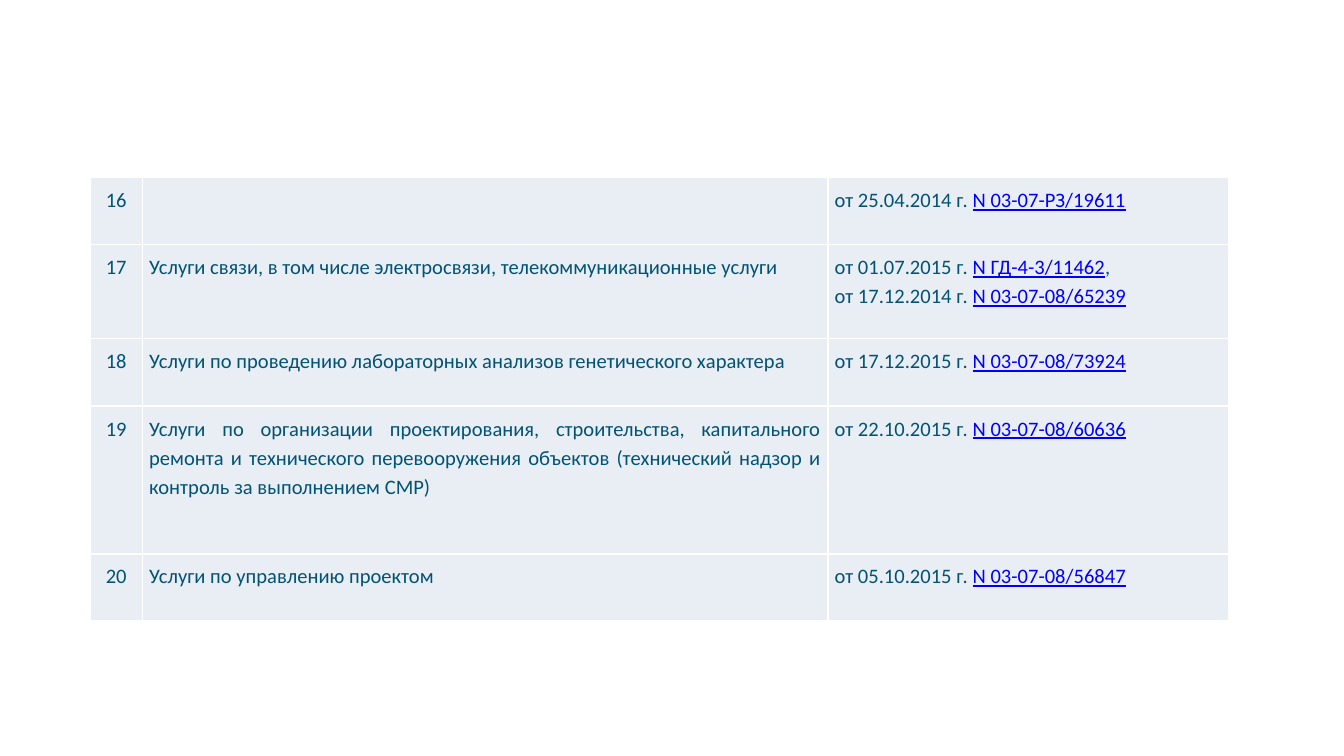
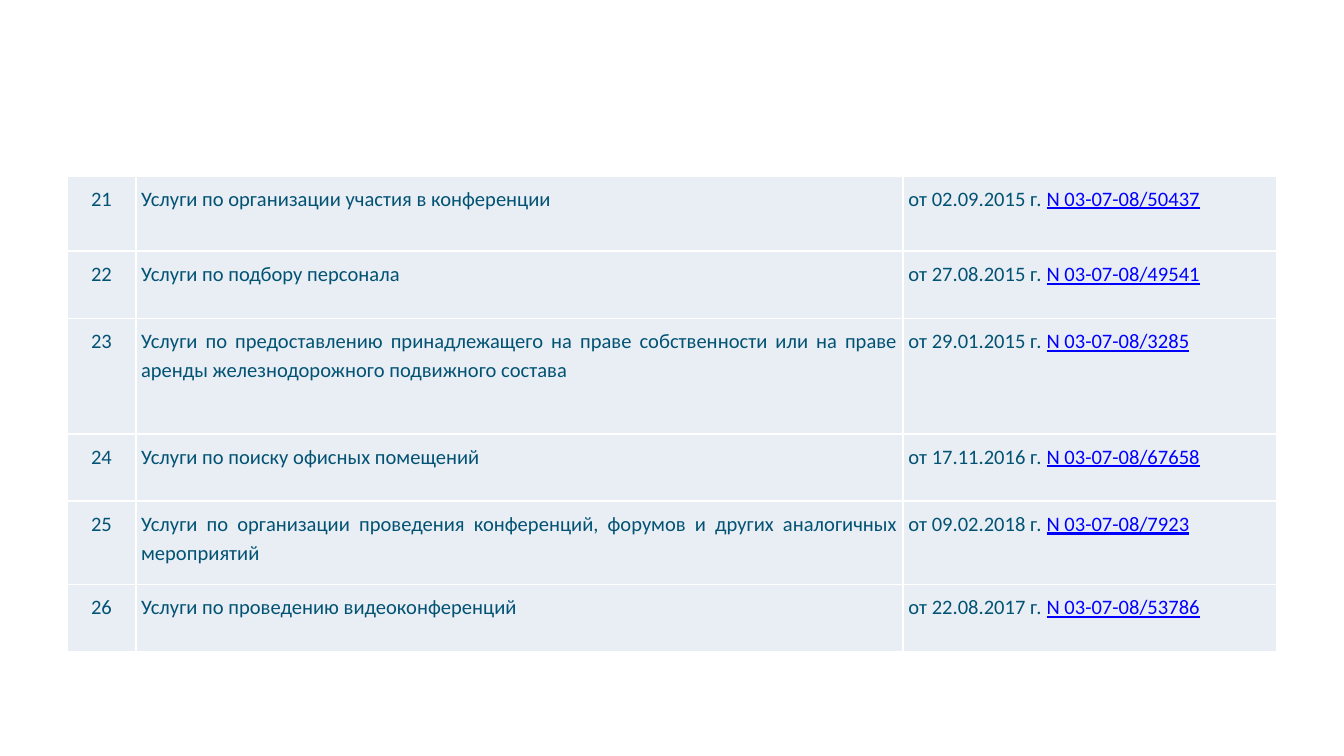
from lxml import etree
from pptx import Presentation
from pptx.dml.color import RGBColor
from pptx.enum.text import PP_ALIGN
from pptx.oxml.ns import qn
from pptx.util import Inches, Pt

CENTER = PP_ALIGN.CENTER
JUSTIFY = PP_ALIGN.JUSTIFY
LEFT = PP_ALIGN.LEFT

FONT = "Calibri"
TEXT = "025373"
LINK = "0000FF"
CELL = "E9EDF4"
BORDER = "FFFFFF"


def color(value):
    return RGBColor.from_string(value)


def add_borders(cell):
    properties = cell._tc.get_or_add_tcPr()
    for side in ("a:lnL", "a:lnR", "a:lnT", "a:lnB"):
        line = etree.SubElement(properties, qn(side), w=str(Pt(1)))
        fill = etree.SubElement(line, qn("a:solidFill"))
        etree.SubElement(fill, qn("a:srgbClr"), val=BORDER)


tables = [
    {
        "left": 0.67, "top": 1.32, "first_number": 16,
        "side_margin": 0.05, "letter_alignment": JUSTIFY,
        "widths": [0.39, 5.1, 2.98],
        "rows": [
            (0.5, "", [("25.04.2014", "03-07-РЗ/19611")]),
            (0.7, "Услуги связи, в том числе электросвязи, телекоммуникационные услуги",
             [("01.07.2015", "ГД-4-3/11462"), ("17.12.2014", "03-07-08/65239")]),
            (0.5, "Услуги по проведению лабораторных анализов генетического характера",
             [("17.12.2015", "03-07-08/73924")]),
            (1.1, "Услуги по организации проектирования, строительства, капитального "
             "ремонта и технического перевооружения объектов (технический надзор и "
             "контроль за выполнением СМР)", [("22.10.2015", "03-07-08/60636")]),
            (0.5, "Услуги по управлению проектом", [("05.10.2015", "03-07-08/56847")]),
        ],
    },
    {
        "left": 0.5, "top": 1.31, "first_number": 21,
        "side_margin": 0.04, "letter_alignment": LEFT,
        "widths": [0.51, 5.71, 2.78],
        "rows": [
            (0.56, "Услуги по организации участия в конференции",
             [("02.09.2015", "03-07-08/50437")]),
            (0.5, "Услуги по подбору персонала", [("27.08.2015", "03-07-08/49541")]),
            (0.86, "Услуги по предоставлению принадлежащего на праве собственности или "
             "на праве аренды железнодорожного подвижного состава",
             [("29.01.2015", "03-07-08/3285")]),
            (0.5, "Услуги по поиску офисных помещений", [("17.11.2016", "03-07-08/67658")]),
            (0.62, "Услуги по организации проведения конференций, форумов и других "
             "аналогичных мероприятий", [("09.02.2018", "03-07-08/7923")]),
            (0.5, "Услуги по проведению видеоконференций", [("22.08.2017", "03-07-08/53786")]),
        ],
    },
]

presentation = Presentation()
presentation.slide_width = Inches(10)
presentation.slide_height = Inches(10 * 9 / 16)

for content in tables:
    slide = presentation.slides.add_slide(presentation.slide_layouts[6])
    rows = content["rows"]
    widths = content["widths"]
    table = slide.shapes.add_table(
        len(rows), len(widths), Inches(content["left"]), Inches(content["top"]),
        Inches(sum(widths)), Inches(sum(row[0] for row in rows))).table
    table.first_row = False
    table.horz_banding = False
    for column, width in zip(table.columns, widths):
        column.width = Inches(width)

    alignments = [CENTER, JUSTIFY, content["letter_alignment"]]
    for index, (height, service, letters) in enumerate(rows):
        table.rows[index].height = Inches(height)
        number_cell, service_cell, letter_cell = table.rows[index].cells
        number_cell.text_frame.text = str(content["first_number"] + index)
        service_cell.text_frame.text = service
        letter_cell.text_frame.text = "\n".join(f"от {date} г. " for date, _ in letters)

        for position, (_, number) in enumerate(letters):
            paragraph = letter_cell.text_frame.paragraphs[position]
            link = paragraph.add_run()
            link.text = f"N {number}"
            link.font.underline = True
            if position < len(letters) - 1:
                paragraph.add_run().text = ", "

        for cell, alignment in zip(table.rows[index].cells, alignments):
            add_borders(cell)
            cell.fill.solid()
            cell.fill.fore_color.rgb = color(CELL)
            cell.margin_left = cell.margin_right = Inches(content["side_margin"])
            cell.margin_top = cell.margin_bottom = Inches(0.05)
            for paragraph in cell.text_frame.paragraphs:
                paragraph.alignment = alignment
                paragraph.line_spacing = 1.15
                for run in paragraph.runs:
                    run.font.name = FONT
                    run.font.size = Pt(11)
                    run.font.color.rgb = color(LINK if run.font.underline else TEXT)

presentation.save("out.pptx")
